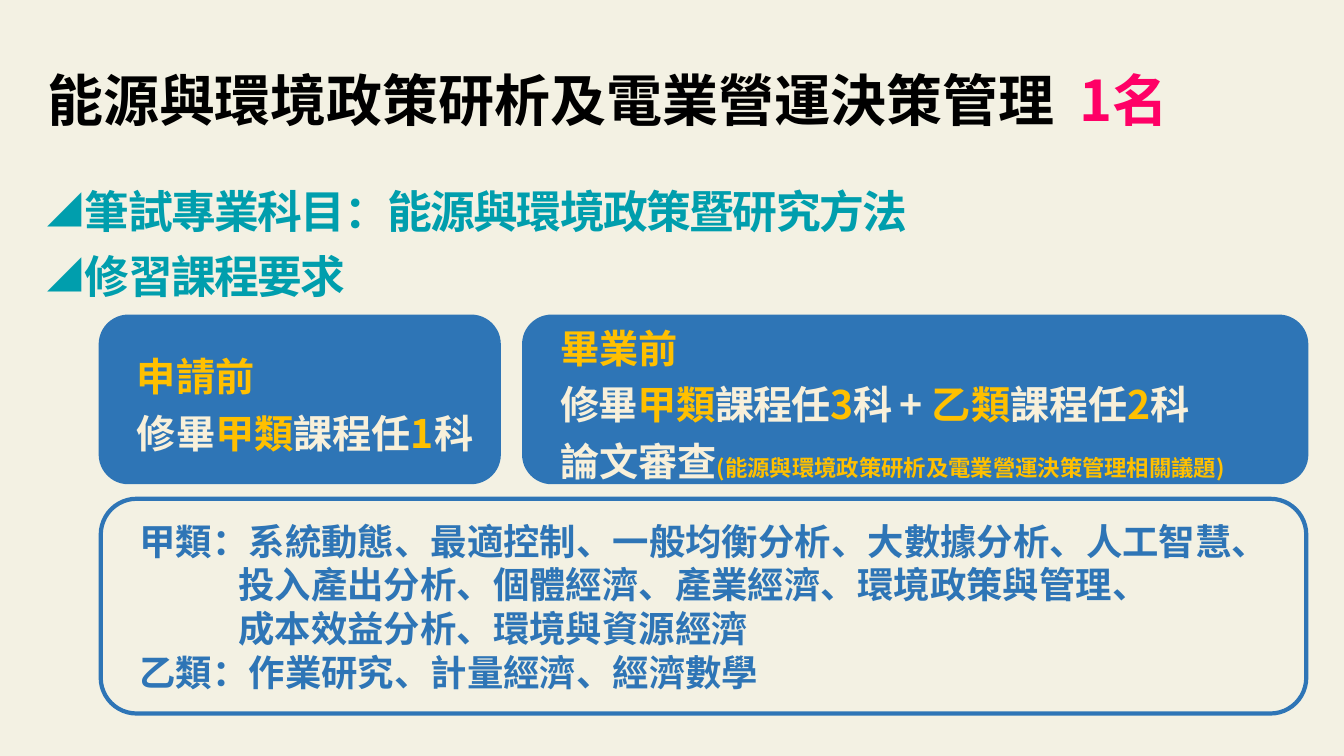
from pptx import Presentation
from pptx.dml.color import RGBColor
from pptx.enum.shapes import MSO_SHAPE as Shape
from pptx.enum.text import MSO_ANCHOR as Anchor, PP_ALIGN as Align
from pptx.oxml.ns import qn
from pptx.util import Cm, Pt
from lxml.etree import SubElement

FONT = "Noto Sans CJK SC"
COLORS = {
    "background": "F3F1E3", "black": "000000", "pink": "FF0066",
    "teal": "009EAD", "blue": "2E75B6", "gold": "FFC000", "cream": "F8F0DA",
}


def color(name):
    return RGBColor.from_string(COLORS[name])


def write(box, lines, size, spacing=1.0):
    frame = box.text_frame
    frame.word_wrap = True
    for index, line in enumerate(lines):
        para = frame.paragraphs[0] if index == 0 else frame.add_paragraph()
        para.alignment = Align.LEFT
        para.line_spacing = spacing
        para.font.name = FONT
        para.font.size = Pt(size)
        para.font.bold = True
        properties = para.font._element
        SubElement(properties, qn("a:ea")).set("typeface", FONT)
        for text, tint, gap in line:
            span = para.add_run()
            span.text = text
            span.font.color.rgb = color(tint)
            if gap:
                span.font._element.set("spc", str(round(gap * 100)))
    return frame


deck = Presentation()
deck.slide_width, deck.slide_height = Cm(33.87), Cm(19.05)
page = deck.slides.add_slide(deck.slide_layouts[6])
page.background.fill.solid()
page.background.fill.fore_color.rgb = color("background")

title = page.shapes.add_textbox(Cm(0.94), Cm(1.47), Cm(29.8), Cm(2.06))
frame = write(title, [[
    ("能源與環境政策研析及電業營運決策管理", "black", 0),
    (" ", "black", 9),
    ("1名", "pink", 0),
]], 40)
frame.vertical_anchor = Anchor.MIDDLE

topics = page.shapes.add_textbox(Cm(0.94), Cm(4.24), Cm(31.06), Cm(5.03))
frame = write(topics, [
    [("筆試專業科目：能源與環境政策暨研究方法", "teal", -1.2)],
    [("修習課程要求", "teal", -1.2)],
], 32, 1.2)
for para in frame.paragraphs:
    properties = para._p.get_or_add_pPr()
    properties.set("marL", str(Cm(0.95)))
    properties.set("indent", str(Cm(-0.95)))
    bullet = properties.makeelement(qn("a:buChar"), {"char": "◢"})
    properties.find(qn("a:defRPr")).addprevious(bullet)

courses = [
    [("甲類：系統動態、最適控制、一般均衡分析、大數據分析、人工智慧、", "blue", 0)],
    [("投入產出分析、個體經濟、產業經濟、環境政策與管理、", "blue", 0)],
    [("成本效益分析、環境與資源經濟", "blue", 0)],
    [("乙類：作業研究、計量經濟、經濟數學", "blue", 0)],
]
graduation = [
    [("畢業前", "gold", 0)],
    [("修畢", "cream", -1), ("甲類", "gold", 0), ("課程任", "cream", -1),
     ("3", "gold", 0), ("科 ", "cream", -1), ("+", "cream", 0),
     (" 乙類", "gold", 0), ("課程任", "cream", 0), ("2", "gold", 0),
     ("科", "cream", 0)],
    [("論文審查", "cream", 0),
     ("(能源與環境政策研析及電業營運決策管理相關議題)", "gold", 0)],
]
application = [
    [("申請前", "gold", 0)],
    [("修畢", "cream", 0), ("甲類", "gold", 0), ("課程任", "cream", 0),
     ("1", "gold", 0), ("科", "cream", 0)],
]

frames = []
for left, top, width, height, filled, lines, size, spacing in [
    (2.54, 12.57, 30.38, 5.41, False, courses, 26, 1.0),
    (13.21, 7.98, 19.71, 4.17, True, graduation, 28, 1.2),
    (2.54, 7.98, 10.03, 4.17, True, application, 28, 1.2),
]:
    panel = page.shapes.add_shape(
        Shape.ROUNDED_RECTANGLE, Cm(left), Cm(top), Cm(width), Cm(height))
    panel.shadow.inherit = False
    if filled:
        panel.fill.solid()
        panel.fill.fore_color.rgb = color("blue")
    else:
        panel.fill.background()
    panel.line.color.rgb = color("blue")
    panel.line.width = Pt(3)
    frame = write(panel, lines, size, spacing)
    frame.vertical_anchor = Anchor.MIDDLE
    frame.margin_left = Cm(0.71)
    frame.margin_top = frame.margin_right = frame.margin_bottom = Cm(0.2)
    frames.append(frame)

course_frame, graduation_frame, application_frame = frames
for para in course_frame.paragraphs[1:3]:
    para._p.get_or_add_pPr().set("marL", str(Cm(2.49)))
graduation_frame.paragraphs[2].runs[1].font.size = Pt(16)

deck.save("out.pptx")
